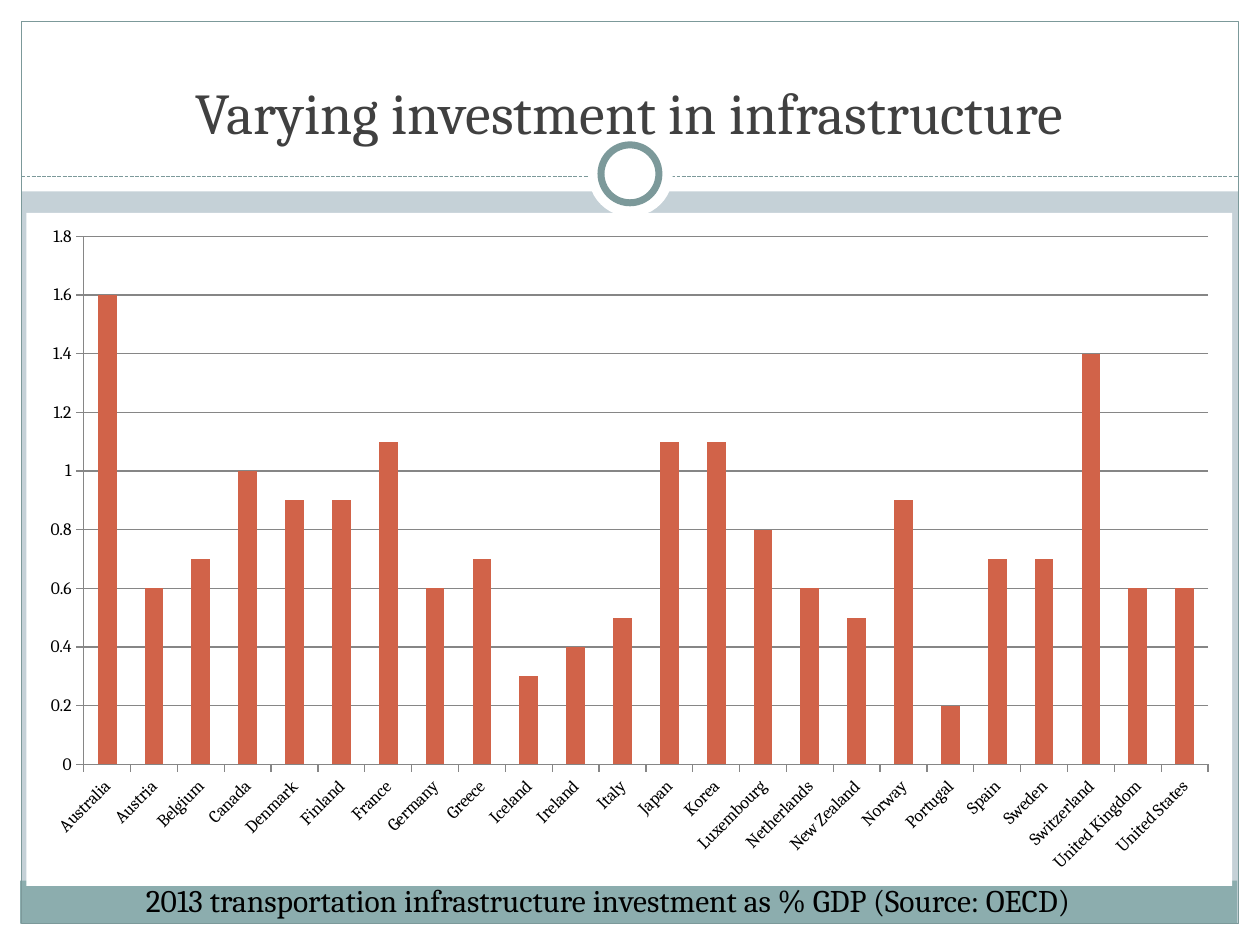
from dataclasses import dataclass

from lxml import etree
from pptx import Presentation
from pptx.chart.data import CategoryChartData
from pptx.dml.color import RGBColor
from pptx.enum.chart import XL_CHART_TYPE, XL_TICK_MARK
from pptx.enum.dml import MSO_LINE
from pptx.enum.shapes import MSO_CONNECTOR, MSO_SHAPE
from pptx.enum.text import MSO_ANCHOR, PP_ALIGN
from pptx.oxml import parse_xml
from pptx.oxml.ns import nsdecls, qn
from pptx.util import Inches, Pt

RECT, OVAL = MSO_SHAPE.RECTANGLE, MSO_SHAPE.OVAL
STRAIGHT = MSO_CONNECTOR.STRAIGHT
COLUMN = XL_CHART_TYPE.COLUMN_CLUSTERED
TICK_OUT, TICK_NONE = XL_TICK_MARK.OUTSIDE, XL_TICK_MARK.NONE
DASH = MSO_LINE.SQUARE_DOT
LEFT, CENTER = PP_ALIGN.LEFT, PP_ALIGN.CENTER
TOP, BOTTOM = MSO_ANCHOR.TOP, MSO_ANCHOR.BOTTOM


@dataclass(frozen=True)
class Theme:
    font: str = "Cambria"
    background: str = "C5D1D7"
    paper: str = "FFFFFF"
    band: str = "8CADAE"
    rule: str = "7C999A"
    title: str = "404040"
    ink: str = "000000"
    grid: str = "868686"
    bar: str = "D16349"
    title_size: float = 33
    caption_size: float = 18
    chart_size: float = 10
    thin: float = 0.75
    ring: float = 4


INVESTMENT = {
    "Australia": 1.6, "Austria": 0.6, "Belgium": 0.7, "Canada": 1,
    "Denmark": 0.9, "Finland": 0.9, "France": 1.1, "Germany": 0.6,
    "Greece": 0.7, "Iceland": 0.3, "Ireland": 0.4, "Italy": 0.5,
    "Japan": 1.1, "Korea": 1.1, "Luxembourg": 0.8, "Netherlands": 0.6,
    "New Zealand": 0.5, "Norway": 0.9, "Portugal": 0.2, "Spain": 0.7,
    "Sweden": 0.7, "Switzerland": 1.4, "United Kingdom": 0.6,
    "United States": 0.6,
}


def rgb(color):
    return RGBColor.from_string(color)


def write(tf, text, *, font, size, color, align=LEFT, anchor=TOP):
    tf.word_wrap = True
    tf.vertical_anchor = anchor
    p = tf.paragraphs[0]
    p.alignment = align
    r = p.add_run()
    r.text = text
    r.font.name = font
    r.font.size = Pt(size)
    r.font.color.rgb = rgb(color)


class SlideBuilder:
    def __init__(self, s, theme):
        self.s = s
        self.theme = theme
        fill = s.background.fill
        fill.solid()
        fill.fore_color.rgb = rgb(theme.background)

    def stroke(self, line, color, width):
        line.color.rgb = rgb(color)
        line.width = Pt(width)

    def shape(self, kind, *box, fill=None, line=None, width=None):
        sp = self.s.shapes.add_shape(kind, *map(Inches, box))
        sp.shadow.inherit = False
        if fill:
            sp.fill.solid()
            sp.fill.fore_color.rgb = rgb(fill)
        else:
            sp.fill.background()
        if line:
            self.stroke(sp.line, line, width)
        else:
            sp.line.fill.background()

    def rule(self, *ends):
        c = self.s.shapes.add_connector(STRAIGHT, *map(Inches, ends))
        self.stroke(c.line, self.theme.rule, self.theme.thin)
        c.line.dash_style = DASH
        etree.SubElement(c._element.spPr, qn("a:effectLst"))

    def text(self, text, *box, **style):
        tb = self.s.shapes.add_textbox(*map(Inches, box))
        write(tb.text_frame, text, font=self.theme.font, **style)

    def chart(self, values, *box):
        t = self.theme
        data = CategoryChartData()
        data.categories = list(values)
        data.add_series("Series 1", list(values.values()))
        frame = self.s.shapes.add_chart(COLUMN, *map(Inches, box), data)
        chart = frame.chart
        chart.has_legend = False
        chart.has_title = False
        chart.font.name = t.font
        chart.font.size = Pt(t.chart_size)
        chart.font.color.rgb = rgb(t.ink)
        for axis in (chart.category_axis, chart.value_axis):
            axis.major_tick_mark = TICK_OUT
            axis.minor_tick_mark = TICK_NONE
            self.stroke(axis.format.line, t.grid, t.thin)
        chart.category_axis.has_major_gridlines = False
        value_axis = chart.value_axis
        value_axis.minimum_scale = 0
        value_axis.maximum_scale = 1.8
        value_axis.major_unit = 0.2
        value_axis.tick_labels.number_format = "General"
        value_axis.tick_labels.number_format_is_linked = False
        self.stroke(value_axis.major_gridlines.format.line, t.grid, t.thin)
        plot = chart.plots[0]
        plot.gap_width = 150
        plot.vary_by_categories = False
        fill = plot.series[0].format.fill
        fill.solid()
        fill.fore_color.rgb = rgb(t.bar)
        chart._chartSpace.find(qn("c:chart")).addnext(parse_xml(
            f'<c:spPr {nsdecls("c", "a")}><a:solidFill>'
            f'<a:srgbClr val="{t.paper}"/></a:solidFill>'
            '<a:ln><a:noFill/></a:ln></c:spPr>'))


def main():
    prs = Presentation()
    prs.slide_width, prs.slide_height = Inches(10), Inches(7.5)
    t = Theme()
    b = SlideBuilder(prs.slides.add_slide(prs.slide_layouts[6]), t)

    for margin in ((0, 7.33, 10, 0.17), (0, 0, 10, 1.52),
                   (0, 0, 0.17, 7.5), (9.83, 0, 0.17, 7.5)):
        b.shape(RECT, *margin, fill=t.paper)
    b.shape(RECT, 0.16, 6.99, 9.66, 0.34, fill=t.band)
    b.shape(RECT, 0.17, 0.17, 9.66, 7.16, line=t.rule, width=t.thin)
    b.rule(0.17, 1.4, 9.83, 1.4)
    b.shape(OVAL, 4.67, 1.05, 0.67, 0.67, fill=t.paper)
    b.shape(OVAL, 4.77, 1.15, 0.46, 0.46,
            fill=t.paper, line=t.rule, width=t.ring)

    b.text("Varying investment in infrastructure", 0.33, 0.38, 9.33, 0.83,
           size=t.title_size, color=t.title, align=CENTER, anchor=BOTTOM)
    b.text("2013 transportation infrastructure investment as % GDP "
           "(Source: OECD)", 1.06, 6.94, 8.33, 0.71,
           size=t.caption_size, color=t.ink)
    b.chart(INVESTMENT, 0.21, 1.69, 9.57, 5.34)

    prs.save("out.pptx")


if __name__ == "__main__":
    main()
